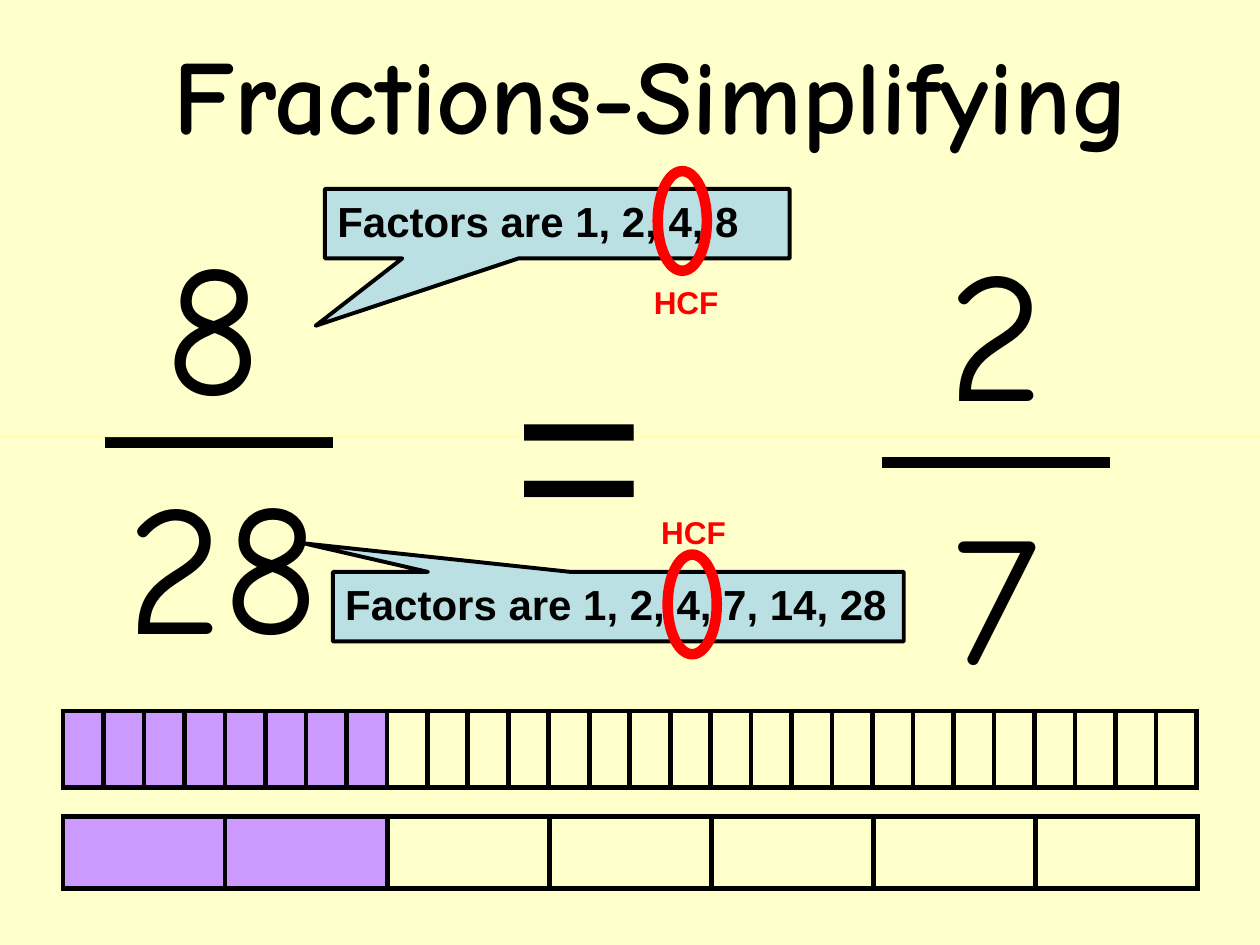
from dataclasses import dataclass

from lxml.etree import SubElement as Sub
from pptx import Presentation
from pptx.dml.color import RGBColor as Color
from pptx.enum.shapes import MSO_CONNECTOR as Link, MSO_SHAPE as Kind
from pptx.enum.text import MSO_ANCHOR as Anchor, MSO_AUTO_SIZE as Auto, PP_ALIGN as Align
from pptx.oxml.ns import qn
from pptx.util import Cm, Pt

CREAM = Color(0xFF, 0xFF, 0xCC)
YELLOW = Color(0xFF, 0xFF, 0x00)
BLACK = Color(0x00, 0x00, 0x00)
RED = Color(0xFF, 0x00, 0x00)
BLUE = Color(0xBB, 0xE0, 0xE3)
LILAC = Color(0xCC, 0x99, 0xFF)
COMIC = "Comic Neue"
ARIAL = "Arial"


@dataclass
class Box:
    left: float
    top: float
    width: float
    height: float

    def cm(self) -> tuple:
        return Cm(self.left), Cm(self.top), Cm(self.width), Cm(self.height)


@dataclass
class Label:
    text: str
    box: Box
    size: float
    font: str = COMIC
    color: Color = BLACK
    bold: bool = False
    align: Align = Align.CENTER


@dataclass
class Callout:
    text: str
    box: Box
    tip: tuple


@dataclass
class Bar:
    box: Box
    cells: int
    shaded: int


LINES = [(2.11, 8.92), (17.78, 9.32)]
LINE_WIDTH = 4.6

CALLOUTS = [
    Callout("Factors are 1, 2, 4, 8", Box(6.55, 3.81, 9.37, 1.4), (-0.52, 1.47)),
    Callout("Factors are 1, 2, 4, 7, 14, 28", Box(6.71, 11.53, 11.51, 1.4), (-0.55, -0.91)),
]

RINGS = [Box(13.46, 11.18, 0.99, 2.01), Box(13.26, 3.45, 0.99, 2.01)]

LABELS = [
    Label("8", Box(1.7, 4.11, 5.21, 4.75), 106),
    Label("=", Box(10.11, 6.12, 3, 5.72), 129, ARIAL, align=Align.LEFT),
    Label("2", Box(17.98, 4.24, 4.19, 4.75), 106),
    Label("HCF", Box(12.93, 5.59, 2.21, 1.02), 18, ARIAL, RED, True, Align.LEFT),
    Label("HCF", Box(13.08, 10.21, 2.21, 1.02), 18, ARIAL, RED, True, Align.LEFT),
    Label("7", Box(17.98, 9.53, 4.19, 4.75), 106),
    Label("28", Box(1.88, 8.92, 5.21, 4.75), 106),
]

BARS = [
    Bar(Box(1.27, 14.33, 22.86, 1.55), 28, 8),
    Bar(Box(1.27, 16.46, 22.88, 1.45), 7, 2),
]


def write(shape, text: str, *, size: float, font: str = ARIAL, color: Color = BLACK,
          bold: bool = False, align: Align = Align.LEFT, anchor: Anchor = Anchor.TOP) -> None:
    frame = shape.text_frame
    frame.word_wrap = True
    frame.vertical_anchor = anchor
    para = frame.paragraphs[0]
    para.alignment = align
    run = para.add_run()
    run.text = text
    run.font.size = Pt(size)
    run.font.name = font
    run.font.bold = bold
    run.font.color.rgb = color


def add_title(slide) -> None:
    title = slide.shapes.title
    title.left, title.top, title.width, title.height = Box(1.7, 0.91, 22.86, 3.18).cm()
    write(title, "Fractions-Simplifying", size=60, font=COMIC, bold=True,
          align=Align.CENTER, anchor=Anchor.MIDDLE)
    title.text_frame.auto_size = Auto.NONE
    title.text_frame.margin_bottom = Cm(1.4)


def add_shape(slide, kind: Kind, box: Box, fill=None, line=None, width: float = 0):
    shape = slide.shapes.add_shape(kind, *box.cm())
    shape.shadow.inherit = False
    for paint, color in ((shape.fill, fill), (shape.line.fill, line)):
        if color is None:
            paint.background()
        else:
            paint.solid()
            paint.fore_color.rgb = color
    if line is not None:
        shape.line.width = Pt(width)
    return shape


def add_line(slide, left: float, top: float) -> None:
    line = slide.shapes.add_connector(
        Link.STRAIGHT, Cm(left), Cm(top), Cm(left + LINE_WIDTH), Cm(top))
    line.line.color.rgb = BLACK
    line.line.width = Pt(6)
    Sub(line._element.spPr, qn("a:effectLst"))


def add_label(slide, label: Label) -> None:
    shape = slide.shapes.add_textbox(*label.box.cm())
    write(shape, label.text, size=label.size, font=label.font, color=label.color,
          bold=label.bold, align=label.align)
    shape.text_frame.auto_size = Auto.SHAPE_TO_FIT_TEXT


def add_callout(slide, note: Callout) -> None:
    shape = add_shape(slide, Kind.RECTANGULAR_CALLOUT, note.box, BLUE, BLACK, 2.25)
    shape.adjustments[0], shape.adjustments[1] = note.tip
    write(shape, note.text, size=24, bold=True)


def add_edges(cell) -> None:
    props = cell._tc.get_or_add_tcPr()
    for side in ("lnL", "lnR", "lnT", "lnB"):
        edge = Sub(props, qn(f"a:{side}"), w=str(Pt(3)))
        fill = Sub(edge, qn("a:solidFill"))
        Sub(fill, qn("a:srgbClr"), val=str(BLACK))


def add_bar(slide, bar: Bar) -> None:
    table = slide.shapes.add_table(1, bar.cells, *bar.box.cm()).table
    table.first_row = table.horz_banding = False
    for index, column in enumerate(table.columns):
        column.width = Cm(bar.box.width / bar.cells)
        cell = table.cell(0, index)
        cell.margin_left = cell.margin_right = 0
        add_edges(cell)
        if index < bar.shaded:
            cell.fill.solid()
            cell.fill.fore_color.rgb = LILAC
        else:
            cell.fill.background()


def main() -> None:
    deck = Presentation()
    deck.slide_width, deck.slide_height = Cm(25.4), Cm(19.05)
    slide = deck.slides.add_slide(deck.slide_layouts[5])
    slide.background.fill.solid()
    slide.background.fill.fore_color.rgb = CREAM
    add_title(slide)
    for left, top in LINES:
        add_line(slide, left, top)
    add_shape(slide, Kind.RECTANGLE, Box(0, 8.81, 25.4, 0), YELLOW)
    for note in CALLOUTS:
        add_callout(slide, note)
    for ring in RINGS:
        add_shape(slide, Kind.OVAL, ring, line=RED, width=6)
    for label in LABELS:
        add_label(slide, label)
    for bar in BARS:
        add_bar(slide, bar)
    deck.save("out.pptx")


if __name__ == "__main__":
    main()
